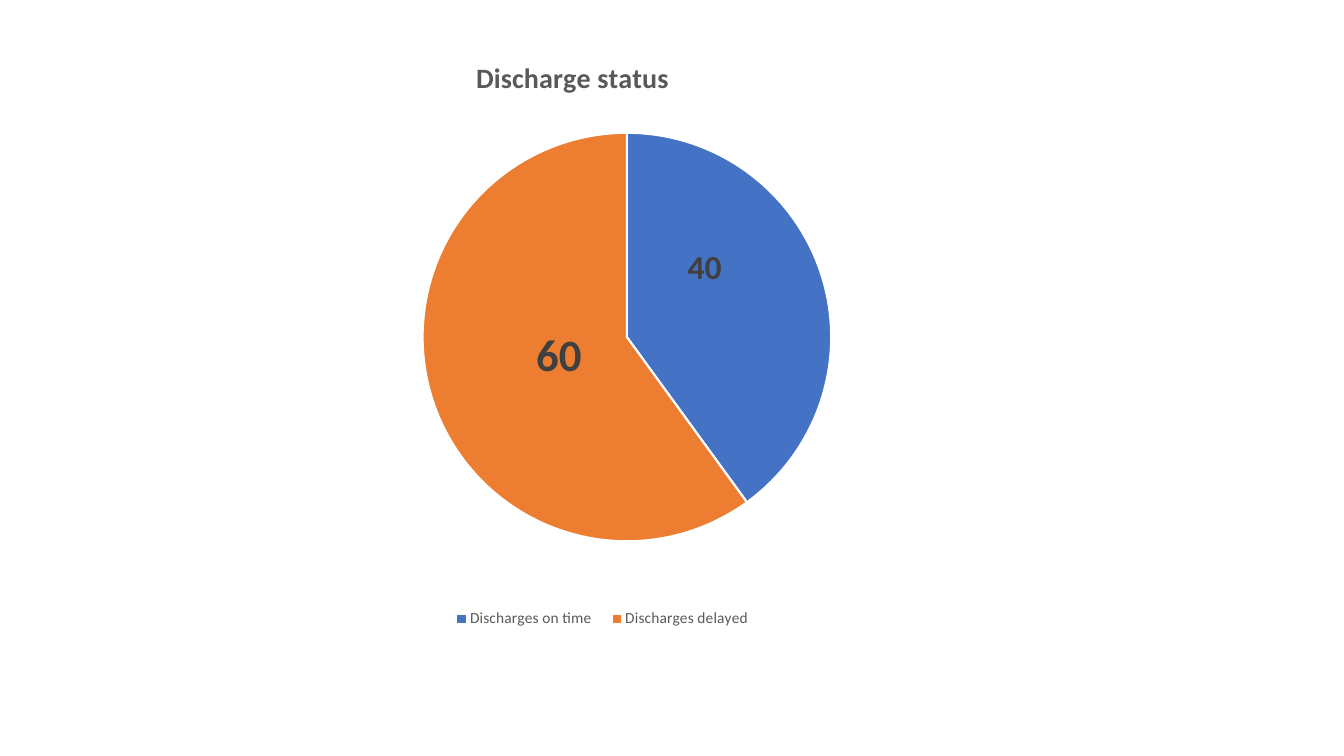
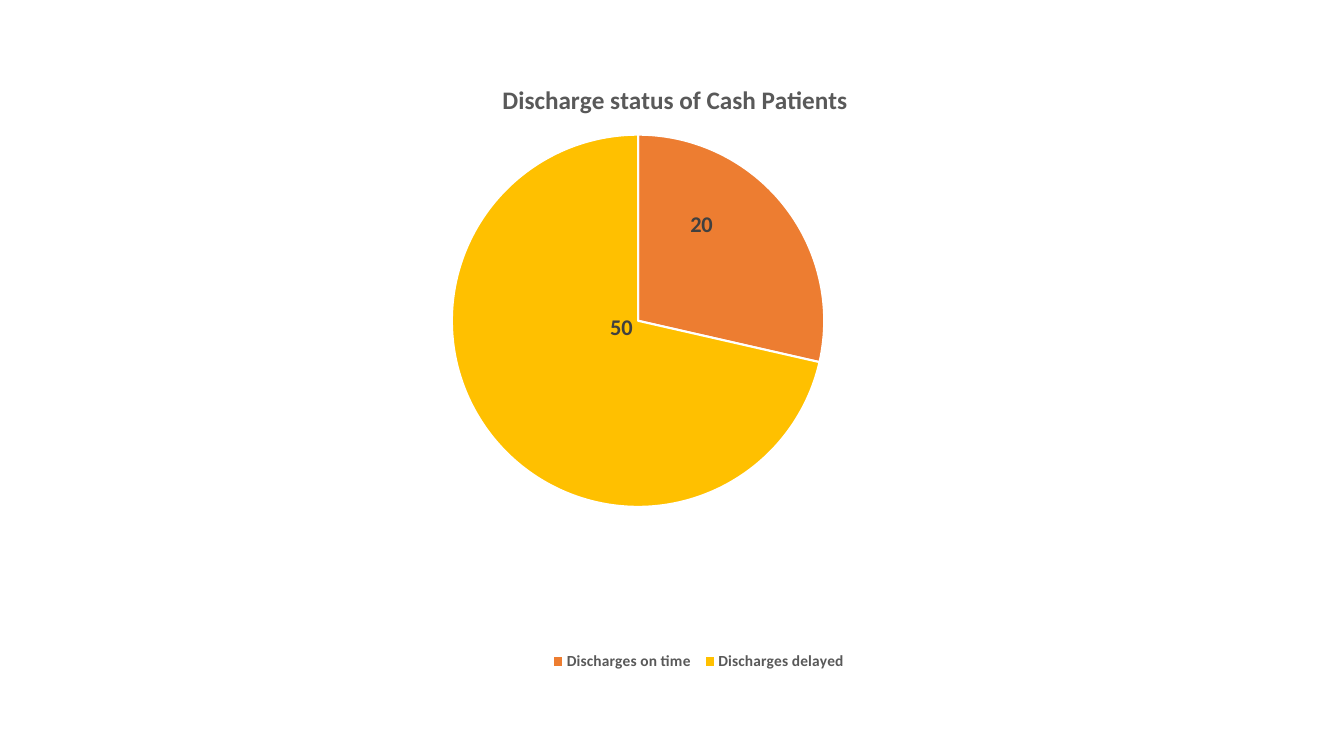
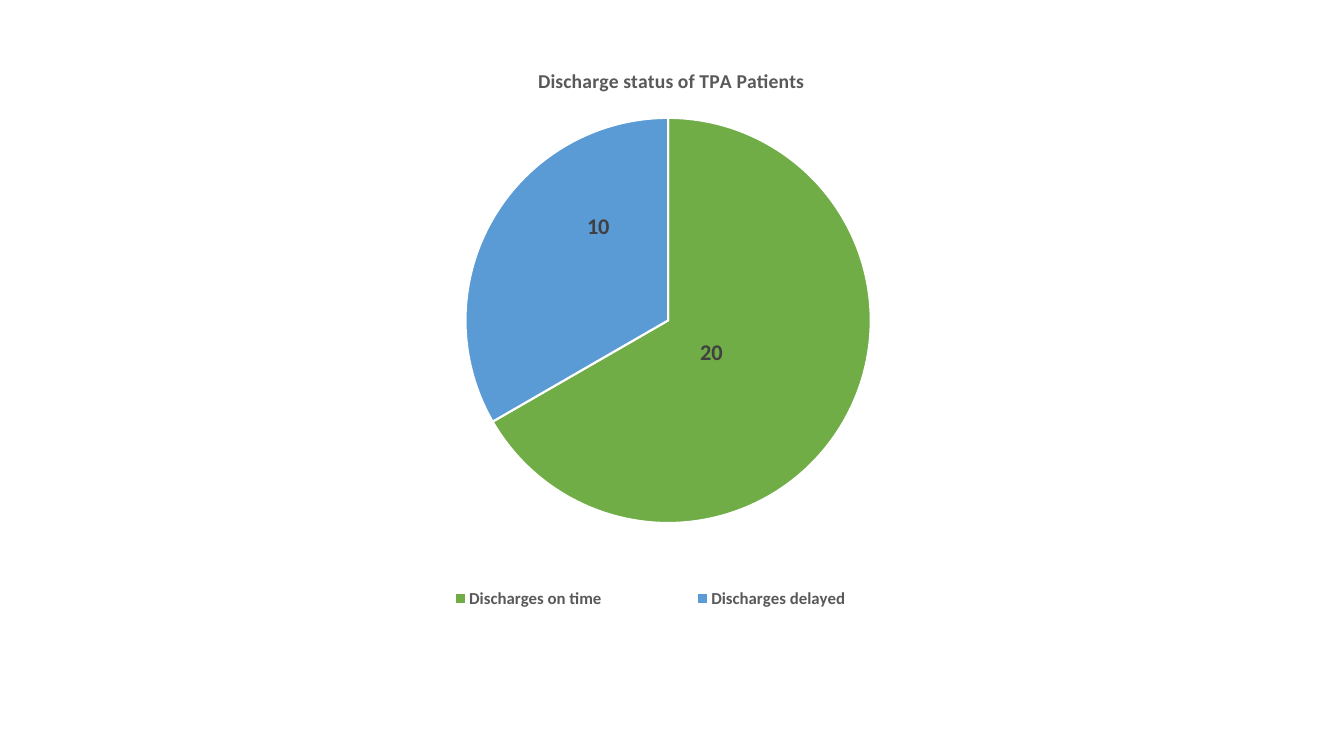
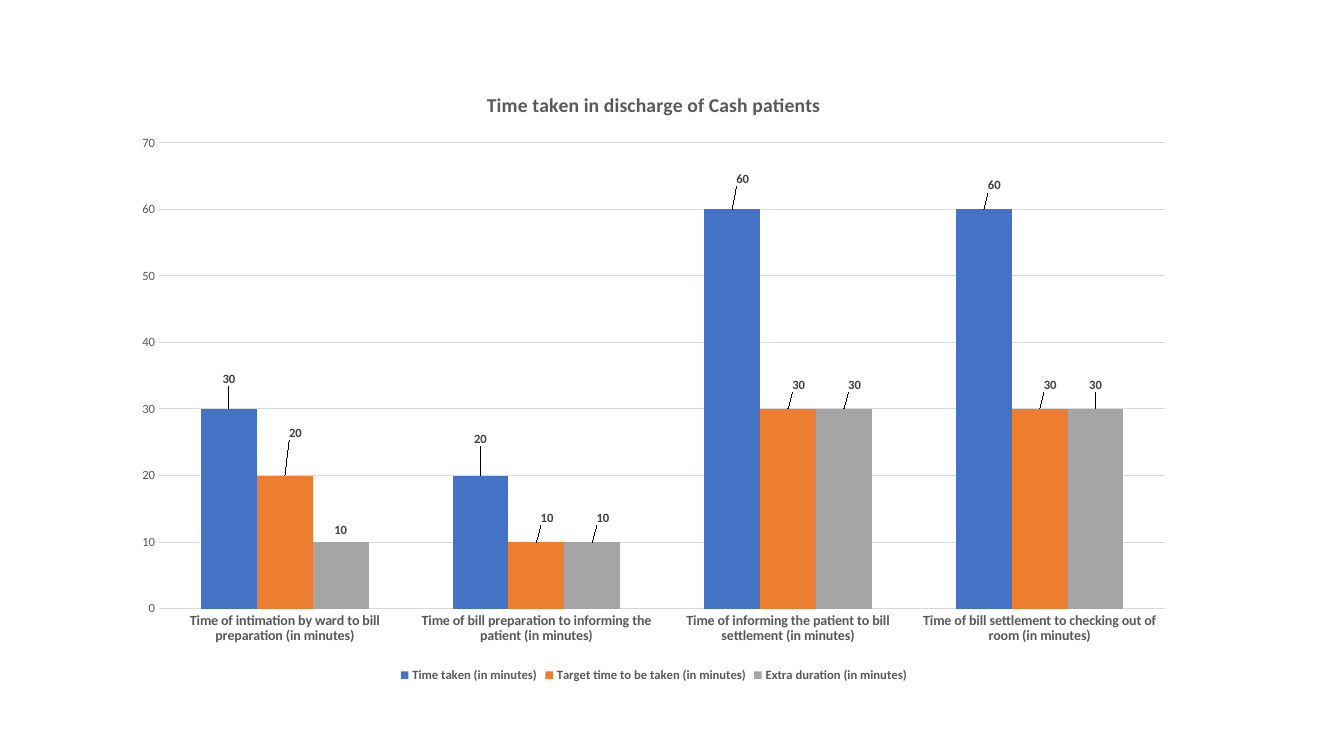
from pptx import Presentation
from pptx.chart.data import CategoryChartData
from pptx.dml.color import RGBColor
from pptx.enum.chart import XL_CHART_TYPE as CT, XL_LABEL_POSITION as LP
from pptx.enum.chart import XL_LEGEND_POSITION as LEG, XL_TICK_MARK as TICK
from pptx.oxml.ns import qn
from pptx.util import Inches, Pt
from lxml import etree

C = {"blue": "4472C4", "orange": "ED7D31", "gray": "A5A5A5", "gold": "FFC000",
     "green": "70AD47", "sky": "5B9BD5", "text": "595959", "label": "404040",
     "grid": "D9D9D9", "white": "FFFFFF"}
FONT = "Calibri"


def style(font, size, color="text", bold=False):
    font.name, font.size, font.bold = FONT, Pt(size), bold
    font.color.rgb = RGBColor.from_string(C[color])


def set_layout(parent, after, values, edge=True, inner=False):
    """Place a chart part by hand, as fractions of the chart."""
    for old in parent.findall(qn("c:layout")):
        parent.remove(old)
    layout = etree.Element(qn("c:layout"))
    manual = etree.SubElement(layout, qn("c:manualLayout"))
    settings = [("layoutTarget", "inner")] if inner else []
    if edge:
        settings += [("xMode", "edge"), ("yMode", "edge")]
    settings += zip("xywh", values)
    for tag, val in settings:
        etree.SubElement(manual, qn("c:" + tag)).set("val", str(val))
    previous = None if after is None else parent.find(qn("c:" + after))
    parent.insert(0 if previous is None else parent.index(previous) + 1, layout)


prs = Presentation()
prs.slide_width, prs.slide_height = Inches(13.33), Inches(7.5)

PIE_CATS = ["Discharges on time", "Discharges delayed"]
STEPS = ["Time of intimation by ward to bill preparation (in minutes)",
         "Time of bill preparation to informing the patient (in minutes)",
         "Time of informing the patient to bill settlement (in minutes)",
         "Time of bill settlement to checking out of room (in minutes)"]

# Series: name, values, label shifts, label sizes
charts = [
    dict(at=(1.19, 0.52, 9.67, 6.14), title="Discharge status", size=20,
         title_at=(0.36, 0), plot=(0.09, 0.13, 0.86, 0.66),
         legend=(0.33, 0.89, 0.33, 0.05), legend_font=(11, False),
         colors=["blue", "orange"], cats=PIE_CATS,
         series=[("Series 1", (40, 60), [(-0.02, -0.06), (0.03, -0.02)], (24, 32))]),
    dict(at=(2.25, 0.46, 9.27, 6.26), title="Discharge status of Cash Patients", size=18,
         title_at=(0.29, 0.05), plot=(0.05, 0.14, 0.78, 0.59),
         legend=(0.34, 0.95, 0.33, 0.05), legend_font=(11, True),
         colors=["orange", "gold"], cats=PIE_CATS,
         series=[("Series 1", (20, 50), [(-0.01, -0.06), (0.06, -0.08)], (16, 16))]),
    dict(at=(2.03, 0.51, 8.84, 6), title="Discharge status of TPA Patients", size=14,
         title_at=(0.37, 0.02), plot=(0.09, 0.11, 0.86, 0.67),
         legend=(0.18, 0.87, 0.64, 0.07), legend_font=(12, True),
         colors=["green", "sky"], cats=PIE_CATS,
         series=[("Series 1", (20, 10), [(-0.05, -0.03), (0.02, -0.07)], (16, 16))]),
    dict(at=(1.2, 0.69, 10.57, 6.12), title="Time taken in discharge of Cash patients", size=14,
         legend_font=(9, True), colors=["blue", "orange", "gray"], cats=STEPS,
         series=[("Time taken (in minutes)", (30, 20, 60, 60),
                  [(0, -0.03), (0, -0.04), (0.01, -0.03), (0.01, -0.02)], (9,) * 4),
                 ("Target time to be taken (in minutes)", (20, 10, 30, 30),
                  [(0.01, -0.05)] + [(0.01, -0.02)] * 3, (9,) * 4),
                 ("Extra duration (in minutes)", (10, 10, 30, 30),
                  [None, (0.01, -0.02), (0.01, -0.02), (0, -0.02)], (9,) * 4)]),
]

for d in charts:
    is_pie = "plot" in d
    s = prs.slides.add_slide(prs.slide_layouts[6])
    data = CategoryChartData()
    data.categories = d["cats"]
    for name, values, shifts, sizes in d["series"]:
        data.add_series(name, values)
    kind = CT.PIE if is_pie else CT.COLUMN_CLUSTERED
    chart = s.shapes.add_chart(kind, *[Inches(v) for v in d["at"]], data).chart
    chart.font.name, chart.font.size = FONT, Pt(10)

    # Title and legend
    chart.has_title = True
    r = chart.chart_title.text_frame.paragraphs[0].add_run()
    r.text = d["title"]
    style(r.font, d["size"], bold=True)
    chart.has_legend = True
    legend = chart.legend
    legend.position, legend.include_in_layout = LEG.BOTTOM, False
    size, bold = d["legend_font"]
    style(legend.font, size, bold=bold)
    if is_pie:
        set_layout(chart.chart_title._element, "tx", d["title_at"])
        set_layout(legend._element, "legendPos", d["legend"])
        plot_area = chart._chartSpace.find(".//" + qn("c:plotArea"))
        set_layout(plot_area, None, d["plot"], inner=True)

    # Fills and value labels
    plot = chart.plots[0]
    plot.vary_by_categories = is_pie
    position = LP.CENTER if is_pie else LP.OUTSIDE_END
    for i, (ser, row) in enumerate(zip(plot.series, d["series"])):
        name, values, shifts, sizes = row
        labels = ser.data_labels
        labels.show_value, labels.position = True, position
        style(labels.font, sizes[0], "label", True)
        for j, (shift, size) in enumerate(zip(shifts, sizes)):
            if shift:
                label = ser.points[j].data_label
                style(label.font, size, "label", True)
                label.position = position
                newest = ser._element.findall(".//" + qn("c:dLbl"))[-1]
                set_layout(newest, "idx", shift, edge=False)
        targets = [ser.points[j] for j in range(len(values))] if is_pie else [ser]
        for j, target in enumerate(targets):
            target.format.fill.solid()
            color = C[d["colors"][i + j]]
            target.format.fill.fore_color.rgb = RGBColor.from_string(color)
            if is_pie:
                target.format.line.color.rgb = RGBColor.from_string(C["white"])
                target.format.line.width = Pt(1.5)

    # Column axes
    if not is_pie:
        plot.gap_width, plot.overlap = 150, 0
        for axis, size, bold in ((chart.category_axis, 10, True), (chart.value_axis, 9, False)):
            style(axis.tick_labels.font, size, bold=bold)
            axis.major_tick_mark = axis.minor_tick_mark = TICK.NONE
            axis.format.line.fill.background()
        value_axis = chart.value_axis
        value_axis.minimum_scale, value_axis.maximum_scale = 0, 70
        value_axis.major_unit = 10
        grid = value_axis.major_gridlines.format.line
        grid.color.rgb, grid.width = RGBColor.from_string(C["grid"]), Pt(0.75)

prs.save("out.pptx")
